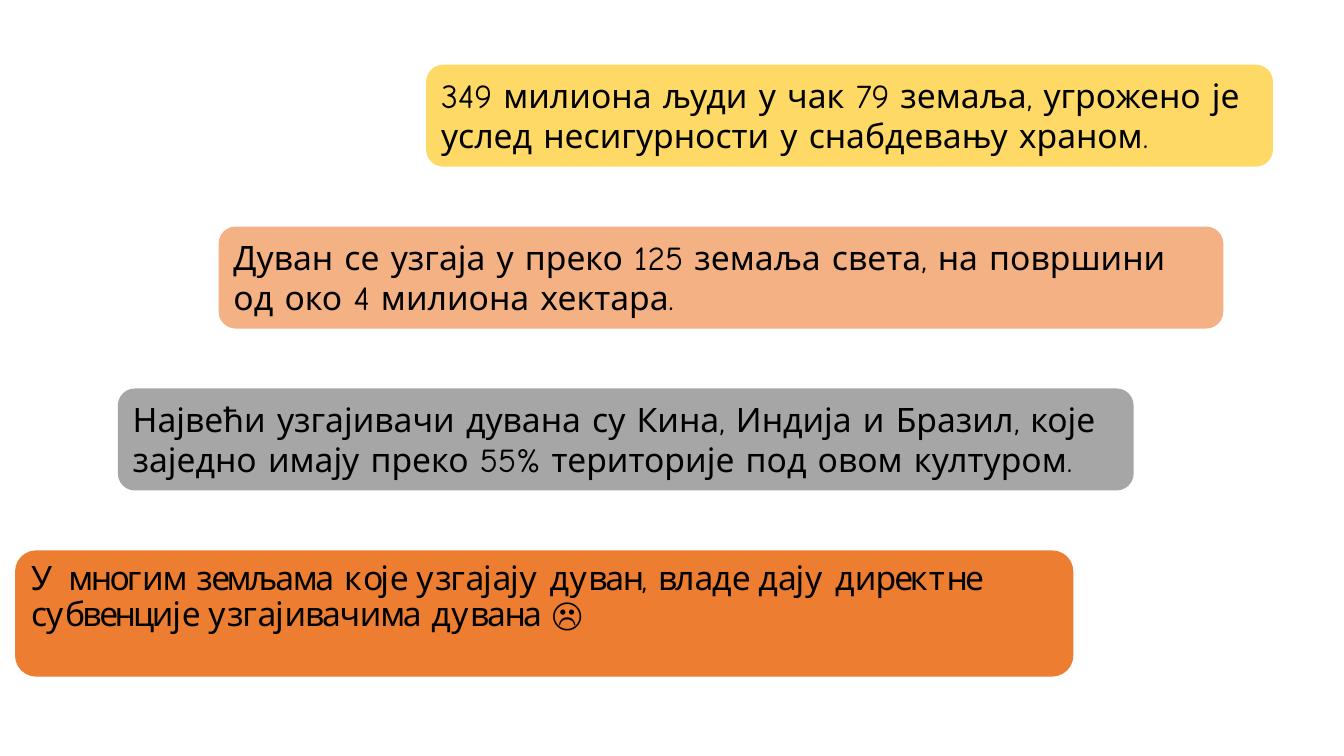
from pptx import Presentation
from pptx.dml.color import RGBColor
from pptx.enum.shapes import MSO_SHAPE as Shape
from pptx.enum.text import MSO_ANCHOR as Anchor, MSO_AUTO_SIZE as AutoSize, PP_ALIGN as Align
from pptx.util import Cm, Pt

YELLOW = RGBColor(0xFF, 0xD9, 0x66)
PEACH = RGBColor(0xF4, 0xB1, 0x83)
GREY = RGBColor(0xA6, 0xA6, 0xA6)
ORANGE = RGBColor(0xED, 0x7D, 0x31)
BLACK = RGBColor(0, 0, 0)

FONT = "Comic Neue"
FIRST_TOP, STEP = 1.63, 4.08
FACT_HEIGHT, CLOSING_HEIGHT = 2.57, 3.18

# Left and width in cm, fill, wording
FACTS = [
    (10.74, 21.34, YELLOW,
     "349 милиона људи у чак 79 земаља, угрожено је услед несигурности у снабдевању храном."),
    (5.51, 25.32, PEACH,
     "Дуван се узгаја у преко 125 земаља света, на површини од око 4 милиона хектара."),
    (2.97, 25.6, GREY,
     "Највећи узгајивачи дувана су Кина, Индија и Бразил, које заједно имају преко 55% "
     "територије под овом културом."),
]
CLOSING = (0.38, 26.67, ORANGE,
           "У многим земљама које узгајају дуван, владе дају директне субвенције "
           "узгајивачима дувана ☹")


def add_fact(page, row, fact, height):
    left, width, fill, wording = fact
    box = page.shapes.add_shape(Shape.ROUNDED_RECTANGLE, Cm(left),
                                Cm(FIRST_TOP + row * STEP), Cm(width), Cm(height))
    box.shadow.inherit = False
    box.fill.solid()
    box.fill.fore_color.rgb = fill
    box.line.fill.background()

    frame = box.text_frame
    frame.word_wrap = True
    frame.vertical_anchor = Anchor.TOP
    frame.text = wording
    para = frame.paragraphs[0]
    para.alignment = Align.LEFT
    para.font.name = FONT
    para.font.size = Pt(24)
    para.font.color.rgb = BLACK
    for span in para.runs:
        span.font.name = FONT
        span.font.size = Pt(24)
        span.font.color.rgb = BLACK
    return frame


def main():
    deck = Presentation()
    deck.slide_width, deck.slide_height = Cm(33.87), Cm(19.05)
    page = deck.slides.add_slide(deck.slide_layouts[6])

    # Facts that grow with their text
    for row, fact in enumerate(FACTS):
        frame = add_fact(page, row, fact, FACT_HEIGHT)
        frame.auto_size = AutoSize.SHAPE_TO_FIT_TEXT

    # Closing remark in a taller box with tighter lines
    frame = add_fact(page, len(FACTS), CLOSING, CLOSING_HEIGHT)
    frame.paragraphs[0].line_spacing = 0.9

    deck.save("out.pptx")


if __name__ == "__main__":
    main()
